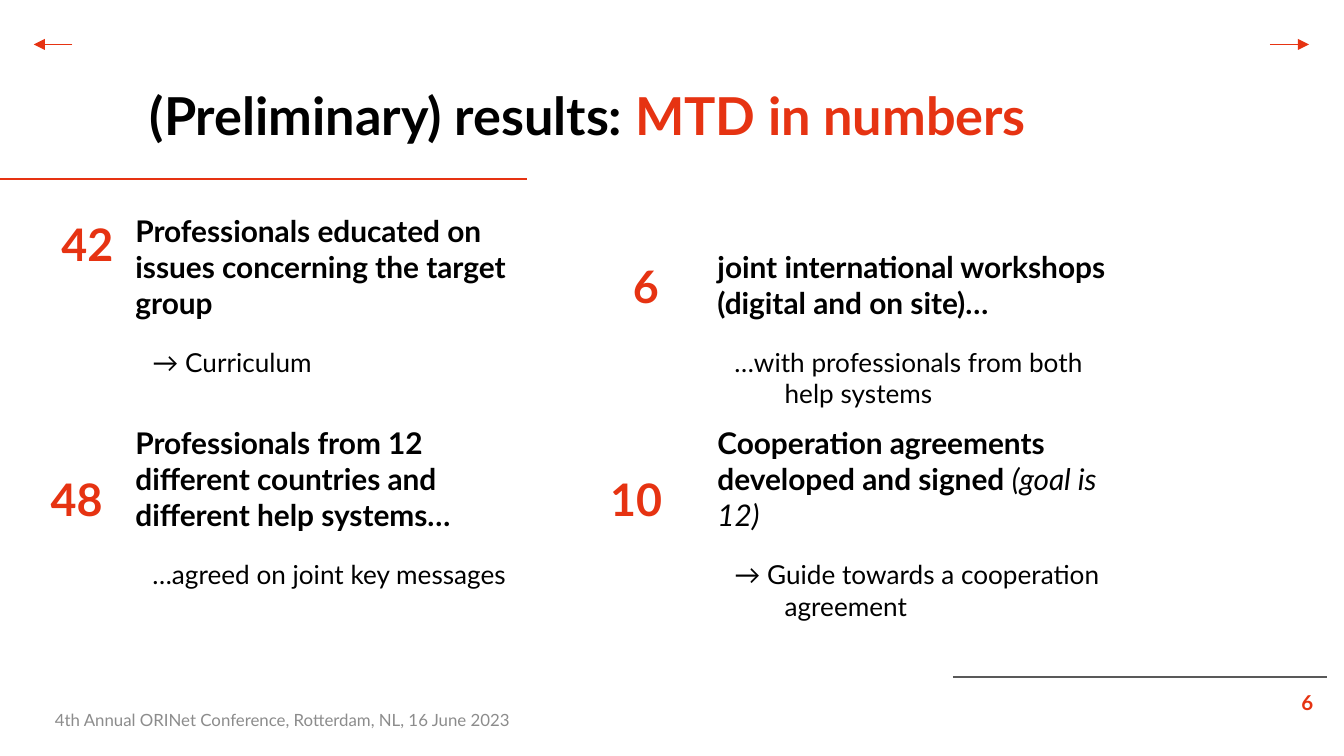
from lxml.etree import SubElement
from pptx import Presentation
from pptx.dml.color import RGBColor
from pptx.enum.shapes import MSO_CONNECTOR
from pptx.enum.text import MSO_ANCHOR, PP_ALIGN
from pptx.oxml.ns import qn
from pptx.util import Cm, Pt

RED, BLACK, GREY, DARK = "E63312", "000000", "8C8C8C", "595959"

TITLE = [("(Preliminary) results: ", {}), ("MTD in numbers", {"color": RED})]
FOOTER = "4th Annual ORINet Conference, Rotterdam, NL, 16 June 2023"
PAGE = "6"

# column, row, number, (left, top, width) of number, head runs, detail, detail width
FACTS = [
    (0, 0, "42", (0.91, 3.84, 1.6),
     [("Professionals educated on issues concerning the target group", {})],
     "→ Curriculum", 7.54),
    (0, 1, "48", (0.71, 8.66, 1.6),
     [("Professionals from 12 different countries and different help systems…", {})],
     "…agreed on joint key messages", 7.54),
    (1, 0, "6", (11.71, 4.65, 1.6),
     [("joint international workshops (digital and on site)…", {})],
     "…with professionals from both help systems", 7.54),
    (1, 1, "10", (11.28, 8.66, 2.03),
     [("Cooperation agreements developed and signed ", {}),
      ("(goal is 12)", {"bold": False, "italic": True})],
     "→ Guide towards a cooperation agreement", 8.97),
]
# x from, x to, y, colour, arrow at end
LINES = [
    (-0.05, 9.96, 3.38, RED, False),
    (18.01, 25.07, 12.8, DARK, False),
    (24.0, 24.74, 0.84, RED, True),
    (1.37, 0.64, 0.84, RED, True),
]
COLS, ROWS = (2.31, 13.31), (4.83, 8.84)
HEAD_W, HEAD_H, SUB_H, NUM_H = 8.23, 1.47, 1.8, 1.65

HEAD = {"size": Pt(16), "bold": True}
SUB = {"size": Pt(14)}
NUM = {"size": Pt(24), "bold": True, "color": RED}


def tint(color, code):
    color.rgb = RGBColor.from_string(code)


def write(box, runs, form, align=PP_ALIGN.LEFT, anchor=MSO_ANCHOR.TOP, pad=0.25):
    """Add a text box at box (cm) and return its paragraph."""
    frame = slide.shapes.add_textbox(*map(Cm, box)).text_frame
    frame.word_wrap = True
    frame.vertical_anchor = anchor
    frame.margin_left = frame.margin_right = Cm(0.25)
    frame.margin_top = frame.margin_bottom = Cm(pad)
    para = frame.paragraphs[0]
    para.alignment = align
    for text, extra in runs:
        run = para.add_run()
        run.text = text
        look = {"name": "Lato", "color": BLACK, **form, **extra}
        tint(run.font.color, look.pop("color"))
        for key, value in look.items():
            setattr(run.font, key, value)
    return para


def rule(start, end, y, color, arrow):
    line = slide.shapes.add_connector(
        MSO_CONNECTOR.STRAIGHT, Cm(start), Cm(y), Cm(end), Cm(y))
    line.line.width = Pt(0.75)
    tint(line.line.color, color)
    if arrow:
        SubElement(line.line._get_or_add_ln(), qn("a:tailEnd"), type="triangle")
    SubElement(line._element.spPr, qn("a:effectLst"))


deck = Presentation()
deck.slide_width, deck.slide_height = Cm(25.4), Cm(14.29)
slide = deck.slides.add_slide(deck.slide_layouts[6])

for item in LINES:
    rule(*item)

write((0.91, 1.32, 20.4, 1.6), TITLE, {"size": Pt(28), "bold": True}, PP_ALIGN.CENTER)

for col, row, num, (left, top, width), head, sub, sub_w in FACTS:
    x, y = COLS[col], ROWS[row]
    write((x, y, HEAD_W, HEAD_H), head, HEAD, anchor=MSO_ANCHOR.BOTTOM)
    write((left, top, width, NUM_H), [(num, {})], NUM)
    para = write((x, y + HEAD_H, sub_w, SUB_H), [(sub, {})], SUB)
    props = para._p.get_or_add_pPr()
    props.set("marL", str(Cm(1.27)))
    props.set("indent", str(Cm(-0.95)))

write((0.79, 13.23, 16.2, 0.76), [(FOOTER, {})], {"size": Pt(9), "color": GREY},
      anchor=MSO_ANCHOR.MIDDLE, pad=0.13)
write((23.44, 12.8, 1.63, 1.09), [(PAGE, {})],
      {"size": Pt(11), "bold": True, "color": RED}, PP_ALIGN.RIGHT)

deck.save("out.pptx")
